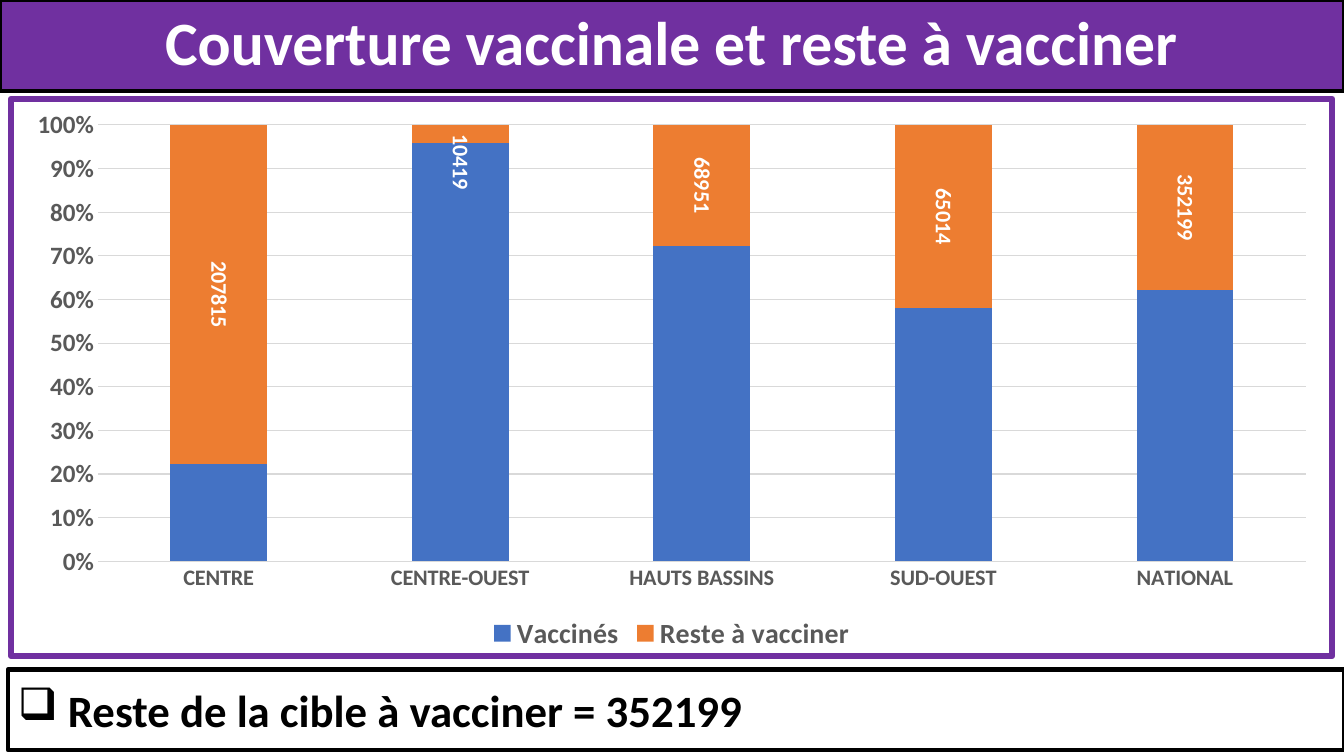
from lxml import etree
from pptx import Presentation
from pptx.chart.data import CategoryChartData
from pptx.dml.color import RGBColor
from pptx.enum.chart import XL_CHART_TYPE, XL_LABEL_POSITION, XL_LEGEND_POSITION, XL_TICK_MARK
from pptx.enum.shapes import MSO_SHAPE
from pptx.enum.text import MSO_ANCHOR, PP_ALIGN
from pptx.oxml import parse_xml
from pptx.oxml.ns import nsdecls, qn
from pptx.util import Cm, Pt

STACKED = XL_CHART_TYPE.COLUMN_STACKED_100
CENTER_LABEL = XL_LABEL_POSITION.CENTER
BOTTOM = XL_LEGEND_POSITION.BOTTOM
NO_TICK = XL_TICK_MARK.NONE
RECTANGLE = MSO_SHAPE.RECTANGLE
MIDDLE = MSO_ANCHOR.MIDDLE
LEFT, CENTER = PP_ALIGN.LEFT, PP_ALIGN.CENTER

PURPLE = RGBColor(0x70, 0x30, 0xA0)
BLACK = RGBColor(0x00, 0x00, 0x00)
WHITE = RGBColor(0xFF, 0xFF, 0xFF)
GRAY = RGBColor(0x59, 0x59, 0x59)
GRID = RGBColor(0xD9, 0xD9, 0xD9)
BLUE = RGBColor(0x44, 0x72, 0xC4)
ORANGE = RGBColor(0xED, 0x7D, 0x31)

REGIONS = ["CENTRE", "CENTRE-OUEST", "HAUTS BASSINS", "SUD-OUEST", "NATIONAL"]
VACCINATED = [60000, 240000, 180000, 90000, 580000]
REMAINING = [207815, 10419, 68951, 65014, 352199]


class CoverageSlide:
    font_name = "Calibri"

    def __init__(self, deck):
        self.page = deck.slides.add_slide(deck.slide_layouts[6])

    def style(self, font, size, color, bold=True):
        font.name = self.font_name
        font.size = Pt(size)
        font.bold = bold
        font.color.rgb = color

    def banner(self, frame, text, size, fill, color, align):
        box = self.page.shapes.add_shape(RECTANGLE, *map(Cm, frame))
        box.shadow.inherit = False
        box.fill.solid()
        box.fill.fore_color.rgb = fill
        box.line.color.rgb = BLACK
        box.line.width = Pt(3)
        box.text_frame.word_wrap = True
        box.text_frame.vertical_anchor = MIDDLE
        para = box.text_frame.paragraphs[0]
        para.text = text
        para.alignment = align
        self.style(para.font, size, color)
        return para

    def bullet(self, para, symbol, indent):
        properties = para._p.get_or_add_pPr()
        properties.set("marL", str(Cm(indent)))
        properties.set("indent", str(-Cm(indent)))
        mark = etree.Element(qn("a:buChar"), char=symbol)
        properties.insert_element_before(mark, "a:tabLst", "a:defRPr", "a:extLst")

    def axis(self, axis, size):
        axis.major_tick_mark = NO_TICK
        axis.minor_tick_mark = NO_TICK
        self.style(axis.tick_labels.font, size, GRAY)

    def border(self, chart, fill, color, width):
        area = parse_xml(
            f'<c:spPr {nsdecls("c", "a")}>'
            f'<a:solidFill><a:srgbClr val="{fill}"/></a:solidFill>'
            f'<a:ln w="{Pt(width)}"><a:solidFill><a:srgbClr val="{color}"/></a:solidFill>'
            f'<a:round/></a:ln></c:spPr>'
        )
        chart._chartSpace.find(qn("c:txPr")).addprevious(area)

    def vertical_label(self, label, element):
        self.style(label.font, 16, WHITE)
        label.position = CENTER_LABEL
        body = element.find(qn("c:txPr")).find(qn("a:bodyPr"))
        body.set("rot", "5400000")
        body.set("vert", "horz")

    def value_labels(self, series):
        labels = series.data_labels
        labels.show_value = True
        labels.number_format = "0"
        labels.number_format_is_linked = False
        self.vertical_label(labels, labels._element)

    def lower_label(self, series, index, shift):
        label = series.points[index].data_label
        label.font.bold = True
        element = series.data_labels._element.find(qn("c:dLbl"))
        self.vertical_label(label, element)
        layout = parse_xml(
            f'<c:layout {nsdecls("c")}><c:manualLayout>'
            f'<c:x val="0"/><c:y val="{shift}"/></c:manualLayout></c:layout>'
        )
        element.find(qn("c:idx")).addnext(layout)

    def stacked_chart(self, frame, categories, series_rows):
        data = CategoryChartData(number_format="0")
        data.categories = categories
        for name, values, color in series_rows:
            data.add_series(name, values)
        chart = self.page.shapes.add_chart(STACKED, *map(Cm, frame), data).chart
        chart.has_title = False
        self.style(chart.font, 11, BLACK, False)
        self.border(chart, WHITE, PURPLE, 4.5)

        self.axis(chart.category_axis, 16)
        chart.category_axis.format.line.color.rgb = GRID
        chart.category_axis.format.line.width = Pt(0.75)
        self.axis(chart.value_axis, 18)
        chart.value_axis.format.line.fill.background()
        chart.value_axis.tick_labels.number_format = "0%"
        chart.value_axis.tick_labels.number_format_is_linked = False
        grid = chart.value_axis.major_gridlines.format.line
        grid.color.rgb = GRID
        grid.width = Pt(0.75)

        chart.has_legend = True
        chart.legend.position = BOTTOM
        chart.legend.include_in_layout = False
        self.style(chart.legend.font, 20, GRAY)

        plot = chart.plots[0]
        plot.gap_width = 150
        plot.overlap = 100
        plot.vary_by_categories = False
        for series, (name, values, color) in zip(plot.series, series_rows):
            series.format.fill.solid()
            series.format.fill.fore_color.rgb = color
        return plot


def main():
    deck = Presentation()
    deck.slide_width = Cm(33.87)
    deck.slide_height = Cm(19.05)
    slide = CoverageSlide(deck)
    title = slide.banner((0, 0, 33.87, 2.29), "Couverture vaccinale et reste à vacciner",
                         44, PURPLE, WHITE, CENTER)
    title.line_spacing = 0.9
    target = slide.banner((0.2, 16.87, 33.67, 2.03), " Reste de la cible à vacciner = 352199",
                          32, WHITE, BLACK, LEFT)
    slide.bullet(target, "❑", 0.79)
    plot = slide.stacked_chart((0.2, 2.41, 33.45, 14.2), REGIONS, [
        ("Vaccinés", VACCINATED, BLUE),
        ("Reste à vacciner", REMAINING, ORANGE),
    ])
    remaining = plot.series[1]
    slide.value_labels(remaining)
    slide.lower_label(remaining, REGIONS.index("CENTRE-OUEST"), 0.05)
    deck.save("out.pptx")


if __name__ == "__main__":
    main()
